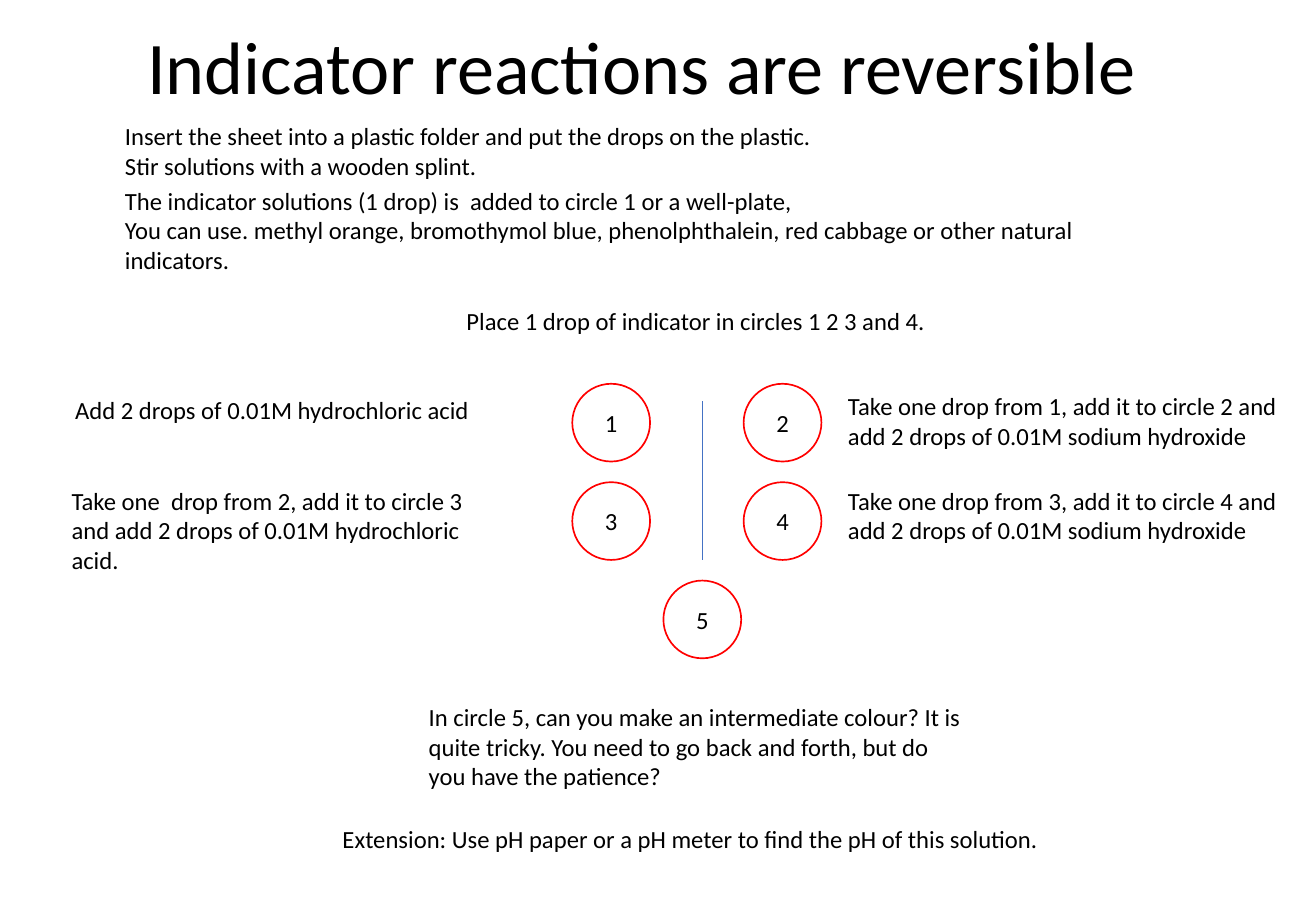
import pptx
import pptx.dml.color
import pptx.enum.shapes
import pptx.enum.text
import pptx.oxml
import pptx.util

Inches, Pt = pptx.util.Inches, pptx.util.Pt
ALIGN = pptx.enum.text.PP_ALIGN
ANCHOR = pptx.enum.text.MSO_ANCHOR
AUTO = pptx.enum.text.MSO_AUTO_SIZE

COLORS = {"text": "000000", "paper": "FFFFFF", "ring": "FF0000", "divider": "4472C4"}

CIRCLE = 0.64
LEFT_X, MIDDLE_X, RIGHT_X = 4.71, 5.46, 6.12
TOP_Y, ROW_STEP = 3.16, 0.81

NOTES = [
    (0.93, 0.95, 6.09, 0.59, "Insert the sheet into a plastic folder and put the drops on the plastic.\n"
                             "Stir solutions with a wooden splint."),
    (0.93, 1.48, 8.83, 0.84, "The indicator solutions (1 drop) is  added to circle 1 or a well-plate, \v"
                             "You can use. methyl orange, bromothymol blue, phenolphthalein, "
                             "red cabbage or other natural indicators."),
    (3.74, 2.47, 4.08, 0.35, "Place 1 drop of indicator in circles 1 2 3 and 4."),
    (0.52, 3.2, 4.31, 0.35, "Add 2 drops of 0.01M hydrochloric acid"),
    (6.88, 3.17, 3.75, 0.59, "Take one drop from 1, add it to circle 2 and "
                             "add 2 drops of 0.01M sodium hydroxide"),
    (0.49, 3.95, 3.75, 0.84, "Take one  drop from 2, add it to circle 3 and "
                             "add 2 drops of 0.01M hydrochloric acid."),
    (6.88, 3.95, 3.75, 0.59, "Take one drop from 3, add it to circle 4 and "
                             "add 2 drops of 0.01M sodium hydroxide"),
    (3.43, 5.73, 4.63, 0.84, "In circle 5, can you make an intermediate colour? It is quite tricky. "
                             "You need to go back and forth, but do you have the patience?"),
    (2.72, 6.73, 6.12, 0.35, "Extension: Use pH paper or a pH meter to find the pH of this solution."),
]


def rgb(name):
    return pptx.dml.color.RGBColor.from_string(COLORS[name])


def apply(target, values):
    for name, value in values.items():
        setattr(target, name, value)


class Sheet:
    font = "Calibri"
    size = 14.6

    def __init__(self, slide):
        self.slide = slide

    def set_text(self, sp, text, size=None, frame=None, para=None):
        """Fill a shape with text in the sheet's font; frame and para hold format values."""
        tf = sp.text_frame
        tf.text = text
        apply(tf, {"word_wrap": True, "auto_size": AUTO.NONE, **(frame or {})})
        for p in tf.paragraphs:
            apply(p, {"alignment": ALIGN.LEFT, **(para or {})})
            for r in p.runs:
                apply(r.font, {"name": self.font, "size": Pt(size or self.size)})
                r.font.color.rgb = rgb("text")

    def title(self, x, y, w, h, text):
        sp = self.slide.shapes.title
        apply(sp, {"left": Inches(x), "top": Inches(y), "width": Inches(w), "height": Inches(h)})
        self.set_text(sp, text, 44, {"vertical_anchor": ANCHOR.MIDDLE}, {"line_spacing": 0.9})

    def note(self, x, y, w, h, text):
        sp = self.slide.shapes.add_textbox(Inches(x), Inches(y), Inches(w), Inches(h))
        self.set_text(sp, text, frame={"auto_size": AUTO.SHAPE_TO_FIT_TEXT})

    def circle(self, x, y, label):
        sp = self.slide.shapes.add_shape(pptx.enum.shapes.MSO_SHAPE.OVAL, Inches(x), Inches(y),
                                         Inches(CIRCLE), Inches(CIRCLE))
        sp.shadow.inherit = False
        sp.fill.solid()
        sp.fill.fore_color.rgb = rgb("paper")
        sp.line.color.rgb = rgb("ring")
        sp.line.width = Pt(1)
        self.set_text(sp, label, frame={"vertical_anchor": ANCHOR.MIDDLE},
                      para={"alignment": ALIGN.CENTER})

    def line(self, x1, y1, x2, y2):
        cxn = self.slide.shapes.add_connector(pptx.enum.shapes.MSO_CONNECTOR.STRAIGHT,
                                              Inches(x1), Inches(y1), Inches(x2), Inches(y2))
        cxn.line.color.rgb = rgb("divider")
        cxn.line.width = Pt(0.5)
        cxn._element.spPr.append(pptx.oxml.parse_xml(
            '<a:effectLst xmlns:a="http://schemas.openxmlformats.org/drawingml/2006/main"/>'))


def main():
    prs = pptx.Presentation()
    prs.slide_width, prs.slide_height = Inches(10.83), Inches(7.5)
    sheet = Sheet(prs.slides.add_slide(prs.slide_layouts[5]))

    sheet.title(1.11, -0.01, 9.34, 1.18, "Indicator reactions are reversible")
    for note in NOTES:
        sheet.note(*note)

    for i in range(4):
        row, col = divmod(i, 2)
        sheet.circle((LEFT_X, RIGHT_X)[col], TOP_Y + row * ROW_STEP, str(i + 1))
    sheet.circle(MIDDLE_X, TOP_Y + 2 * ROW_STEP, "5")
    sheet.line(5.78, 4.61, 5.78, 3.3)

    prs.save("out.pptx")


if __name__ == "__main__":
    main()
